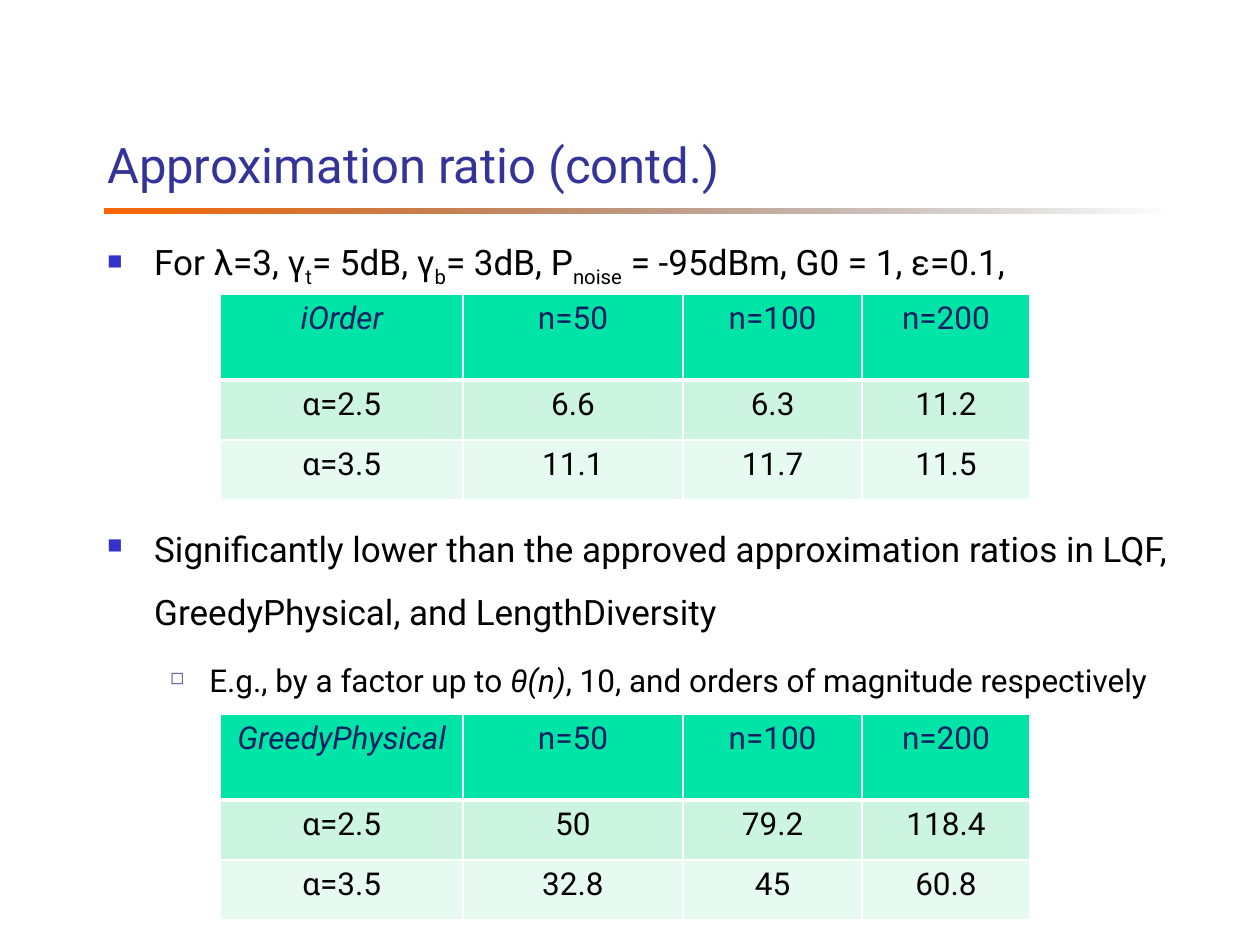
from lxml.etree import SubElement
from pptx import Presentation
from pptx.dml.color import RGBColor
from pptx.enum.shapes import MSO_SHAPE as Shape
from pptx.enum.text import MSO_ANCHOR as Anchor, PP_ALIGN as Align
from pptx.oxml.ns import qn
from pptx.util import Cm, Pt

FONT = "Roboto"
COLORS = {
    "title": "333399", "text": "000000", "rule": "FF6600", "fade": "000000",
    "bullet": "3333CC", "sub_bullet": "504785", "border": "FFFFFF",
    "header": "00E4A8", "header_text": "002060",
    "band_dark": "CCF5E1", "band_light": "E7FAF1",
}
LEVELS = [
    dict(size=20, margin=0.95, hang=0.95, before=15, after=1.2,
         char="■", color="bullet", percent=60),
    dict(size=18, margin=2.06, hang=0.79, before=4.2, after=0,
         char="◻", color="sub_bullet", percent=55),
]
COLUMNS = [4.88, 4.44, 3.61, 3.38]
ROWS = [1.73, 1.21, 1.21]


def rgb(name):
    return RGBColor.from_string(COLORS[name])


def style_run(run, size, color, italic=False):
    run.font.name = FONT
    run.font.size = Pt(size)
    run.font.color.rgb = rgb(color)
    run.font.italic = italic


def add_text_frame(slide, left, top, width, height):
    frame = slide.shapes.add_textbox(Cm(left), Cm(top), Cm(width), Cm(height)).text_frame
    frame.word_wrap = True
    return frame


def add_heading(slide, left, top, width, height, text):
    heading = add_text_frame(slide, left, top, width, height)
    heading.vertical_anchor = Anchor.BOTTOM
    heading.text = text
    style_run(heading.paragraphs[0].runs[0], 28, "title")

    rule = slide.shapes.add_shape(
        Shape.RECTANGLE, Cm(left + 0.2), Cm(top + height + 0.18), Cm(width - 0.18), Cm(0.1))
    rule.shadow.inherit = False
    rule.line.fill.background()
    rule.fill.gradient()
    rule.fill.gradient_angle = 0
    start, end = rule.fill.gradient_stops
    start.color.rgb, start.position = rgb("rule"), 0
    end.color.rgb, end.position = rgb("fade"), 1
    fade_color = rule._element.spPr.findall(".//" + qn("a:srgbClr"))[-1]
    SubElement(fade_color, qn("a:alpha"), val="0")


def set_bullet(paragraph, level):
    properties = paragraph._p.get_or_add_pPr()
    properties.set("marL", str(Cm(level["margin"])))
    properties.set("indent", str(-Cm(level["hang"])))
    color = SubElement(properties, qn("a:buClr"))
    SubElement(color, qn("a:srgbClr"), val=COLORS[level["color"]])
    SubElement(properties, qn("a:buSzPct"), val=str(level["percent"] * 1000))
    SubElement(properties, qn("a:buChar"), char=level["char"])


def add_points(slide, left, top, width, height, points):
    frame = add_text_frame(slide, left, top, width, height)
    for index, (depth, pieces) in enumerate(points):
        level = LEVELS[depth]
        point = frame.add_paragraph() if index else frame.paragraphs[0]
        point.line_spacing = 1.5
        point.space_before = Pt(level["before"] if index else 0)
        point.space_after = Pt(level["after"])
        set_bullet(point, level)
        for text, kind in pieces:
            run = point.add_run()
            run.text = text
            style_run(run, level["size"], "text", kind == "italic")
            if kind == "sub":
                run._r.get_or_add_rPr().set("baseline", "-25000")


def set_borders(cell, bottom_width):
    properties = cell._tc.get_or_add_tcPr()
    widths = {"a:lnL": 1, "a:lnR": 1, "a:lnT": 1, "a:lnB": bottom_width}
    for position, (side, width) in enumerate(widths.items()):
        line = SubElement(properties, qn(side), w=str(Pt(width)))
        fill = SubElement(line, qn("a:solidFill"))
        SubElement(fill, qn("a:srgbClr"), val=COLORS["border"])
        properties.insert(position, line)


def add_ratio_table(slide, left, top, algorithm, ratios):
    values = [[algorithm, "n=50", "n=100", "n=200"],
              ["α=2.5", *ratios[0]], ["α=3.5", *ratios[1]]]
    table = slide.shapes.add_table(
        len(ROWS), len(COLUMNS), Cm(left), Cm(top), Cm(sum(COLUMNS)), Cm(sum(ROWS))).table
    table.first_row = table.horz_banding = False
    for column, width in zip(table.columns, COLUMNS):
        column.width = Cm(width)
    fills = ["header", "band_dark", "band_light"]
    for i, (row, height, fill) in enumerate(zip(table.rows, ROWS, fills)):
        row.height = Cm(height)
        for j, cell in enumerate(row.cells):
            cell.text = values[i][j]
            cell.fill.solid()
            cell.fill.fore_color.rgb = rgb(fill)
            set_borders(cell, 1 if i else 3)
            paragraph = cell.text_frame.paragraphs[0]
            paragraph.alignment = Align.CENTER
            style_run(paragraph.runs[0], 18, "text" if i else "header_text", i == j == 0)


def main():
    deck = Presentation()
    deck.slide_width, deck.slide_height = Cm(25.4), Cm(19.05)
    slide = deck.slides.add_slide(deck.slide_layouts[6])
    add_heading(slide, 1.91, 0.85, 21.64, 3.18, "Approximation ratio (contd.)")
    add_points(slide, 1.91, 4.24, 22.65, 1.5, [
        (0, [("For λ=3, γ", ""), ("t", "sub"), ("= 5dB, γ", ""), ("b", "sub"),
             ("= 3dB, P", ""), ("noise", "sub"), (" = -95dBm, G0 = 1, ε=0.1,", "")]),
    ])
    add_points(slide, 1.91, 10.08, 22.65, 4.2, [
        (0, [("Significantly lower than the approved approximation ratios in LQF, "
              "GreedyPhysical, and LengthDiversity", "")]),
        (1, [("E.g., by a factor up to ", ""), ("θ(n)", "italic"),
             (", 10, and orders of magnitude respectively", "")]),
    ])
    add_ratio_table(slide, 4.45, 5.93, "iOrder",
                    [["6.6", "6.3", "11.2"], ["11.1", "11.7", "11.5"]])
    add_ratio_table(slide, 4.45, 14.4, "GreedyPhysical",
                    [["50", "79.2", "118.4"], ["32.8", "45", "60.8"]])
    deck.save("out.pptx")


if __name__ == "__main__":
    main()
